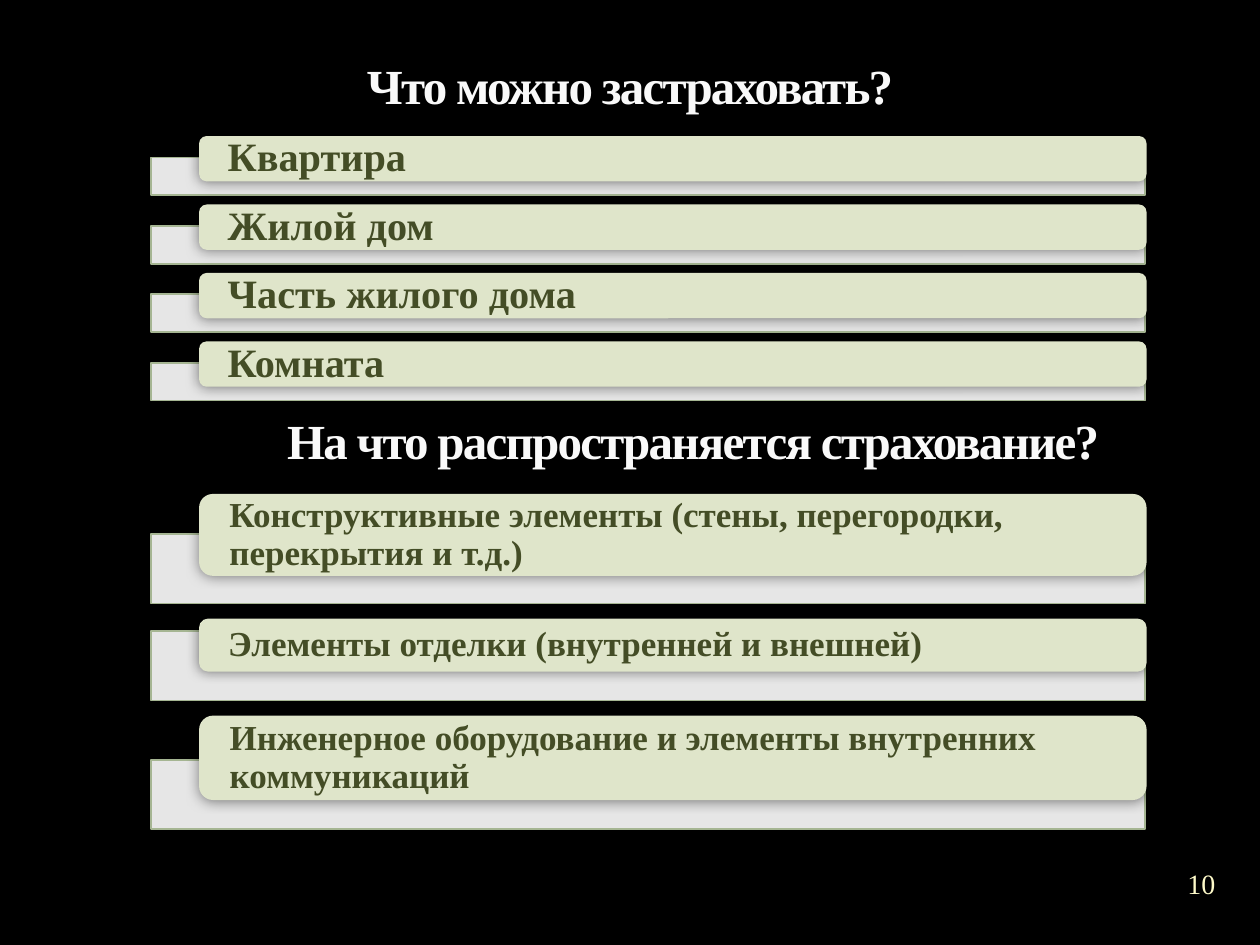
import pptx
import pptx.util
import pptx.dml.color
import pptx.enum.shapes
import pptx.enum.text
import pptx.oxml
import pptx.oxml.ns

Inches, Pt = pptx.util.Inches, pptx.util.Pt
RGBColor = pptx.dml.color.RGBColor
SHAPE = pptx.enum.shapes.MSO_SHAPE
ALIGN = pptx.enum.text.PP_ALIGN
ANCHOR = pptx.enum.text.MSO_ANCHOR

FONT = "Times New Roman"
BLACK = RGBColor(0x00, 0x00, 0x00)
WHITE = RGBColor(0xFF, 0xFF, 0xFF)
HEADING = RGBColor(0xF9, 0xF9, 0xF9)
OUTLINE = RGBColor(0x3C, 0x44, 0x22)
BAND_LINE = RGBColor(0xA5, 0xB5, 0x92)
LABEL_FILL = RGBColor(0xDF, 0xE5, 0xCA)
LABEL_TEXT = RGBColor(0x44, 0x4D, 0x26)
NUMBER = RGBColor(0xFE, 0xFA, 0xC9)

BAND_LEFT, BAND_WIDTH = 1.2, 7.89
LABEL_LEFT, LABEL_WIDTH = 1.58, 7.52

# Insurable property: equal rows
PROPERTIES = ["Квартира", "Жилой дом", "Часть жилого дома", "Комната"]
PROPERTY_TOP, PROPERTY_STEP = 1.08, 1.63 / 3

# Coverage: text, label top, label height, band top
COVERAGE = [
    ("Конструктивные элементы (стены, перегородки, перекрытия и т.д.)",
     3.92, 0.65, 4.24),
    ("Элементы отделки (внутренней и внешней)", 4.91, 0.42, 5.01),
    ("Инженерное оборудование и элементы внутренних коммуникаций",
     5.68, 0.67, 6.03),
]


def drawing_xml(tag, attributes, content):
    return pptx.oxml.parse_xml(
        f'<a:{tag} {pptx.oxml.ns.nsdecls("a")} {attributes}>{content}</a:{tag}>')


def colour_xml(colour, percent):
    return (f'<a:srgbClr val="{colour}">'
            f'<a:alpha val="{percent * 1000}"/></a:srgbClr>')


def set_text(frame, text, size, colour, bold=True, align=ALIGN.LEFT,
             anchor=ANCHOR.MIDDLE, side=0.1, ends=0.05):
    frame.word_wrap = True
    frame.auto_size = pptx.enum.text.MSO_AUTO_SIZE.NONE
    frame.vertical_anchor = anchor
    frame.margin_left = frame.margin_right = Inches(side)
    frame.margin_top = frame.margin_bottom = Inches(ends)
    paragraph = frame.paragraphs[0]
    paragraph.text = text
    paragraph.alignment = align
    font = paragraph.font
    font.name, font.size, font.bold = FONT, Pt(size), bold
    font.color.rgb = colour
    return paragraph


def format_heading(heading, text):
    paragraph = set_text(heading.text_frame, text, 28, HEADING,
                         align=ALIGN.CENTER, anchor=ANCHOR.BOTTOM)
    # Tight letter spacing and a faint outline
    properties = paragraph.runs[0].font._element
    properties.set("spc", "-100")
    fill = f"<a:solidFill>{colour_xml(OUTLINE, 25)}</a:solidFill>"
    properties.insert(0, drawing_xml("ln", f'w="{Pt(0.25)}"', fill))


def add_band(slide, top, height):
    band = slide.shapes.add_shape(
        SHAPE.RECTANGLE, Inches(BAND_LEFT), Inches(top),
        Inches(BAND_WIDTH), Inches(height))
    band.shadow.inherit = False
    band.fill.solid()
    band.fill.fore_color.rgb = WHITE
    band_colour = band._element.spPr.find(".//" + pptx.oxml.ns.qn("a:srgbClr"))
    band_colour.append(drawing_xml("alpha", 'val="90000"', ""))
    band.line.color.rgb = BAND_LINE
    band.line.width = Pt(1)


def add_label(slide, text, top, height, size):
    label = slide.shapes.add_shape(
        SHAPE.ROUNDED_RECTANGLE, Inches(LABEL_LEFT), Inches(top),
        Inches(LABEL_WIDTH), Inches(height))
    label.fill.solid()
    label.fill.fore_color.rgb = LABEL_FILL
    label.line.fill.background()
    # Soft shadow around the label
    label.shadow.inherit = False
    effects = label._element.spPr.find(pptx.oxml.ns.qn("a:effectLst"))
    effects.append(drawing_xml(
        "outerShdw", f'blurRad="{Pt(7.5)}" dist="0" dir="0" rotWithShape="0"',
        colour_xml(BLACK, 50)))
    paragraph = set_text(label.text_frame, text, size, LABEL_TEXT,
                         side=0.21, ends=0)
    paragraph.line_spacing = 0.9


def main():
    deck = pptx.Presentation()
    deck.slide_width, deck.slide_height = Inches(10), Inches(7.5)
    slide = deck.slides.add_slide(deck.slide_layouts[5])
    slide.background.fill.solid()
    slide.background.fill.fore_color.rgb = BLACK

    # Title and insurable property
    title = slide.shapes.title
    title.left, title.top = Inches(0.5), Inches(0.13)
    title.width, title.height = Inches(9), Inches(0.83)
    format_heading(title, "Что можно застраховать?")
    for row, name in enumerate(PROPERTIES):
        top = PROPERTY_TOP + row * PROPERTY_STEP
        add_band(slide, top + 0.17, 0.3)
        add_label(slide, name, top, 0.36, 23)

    # Second heading and coverage
    subheading = slide.shapes.add_textbox(
        Inches(1), Inches(3.22), Inches(9), Inches(0.55))
    format_heading(subheading, "На что распространяется страхование?")
    for text, top, height, band_top in COVERAGE:
        add_band(slide, band_top, 0.55)
        add_label(slide, text, top, height, 20)

    # Slide number
    number = slide.shapes.add_textbox(
        Inches(9.2), Inches(6.76), Inches(0.67), Inches(0.5))
    set_text(number.text_frame, "10", 16, NUMBER, bold=False,
             align=ALIGN.CENTER, side=0, ends=0)

    deck.save("out.pptx")


if __name__ == "__main__":
    main()
